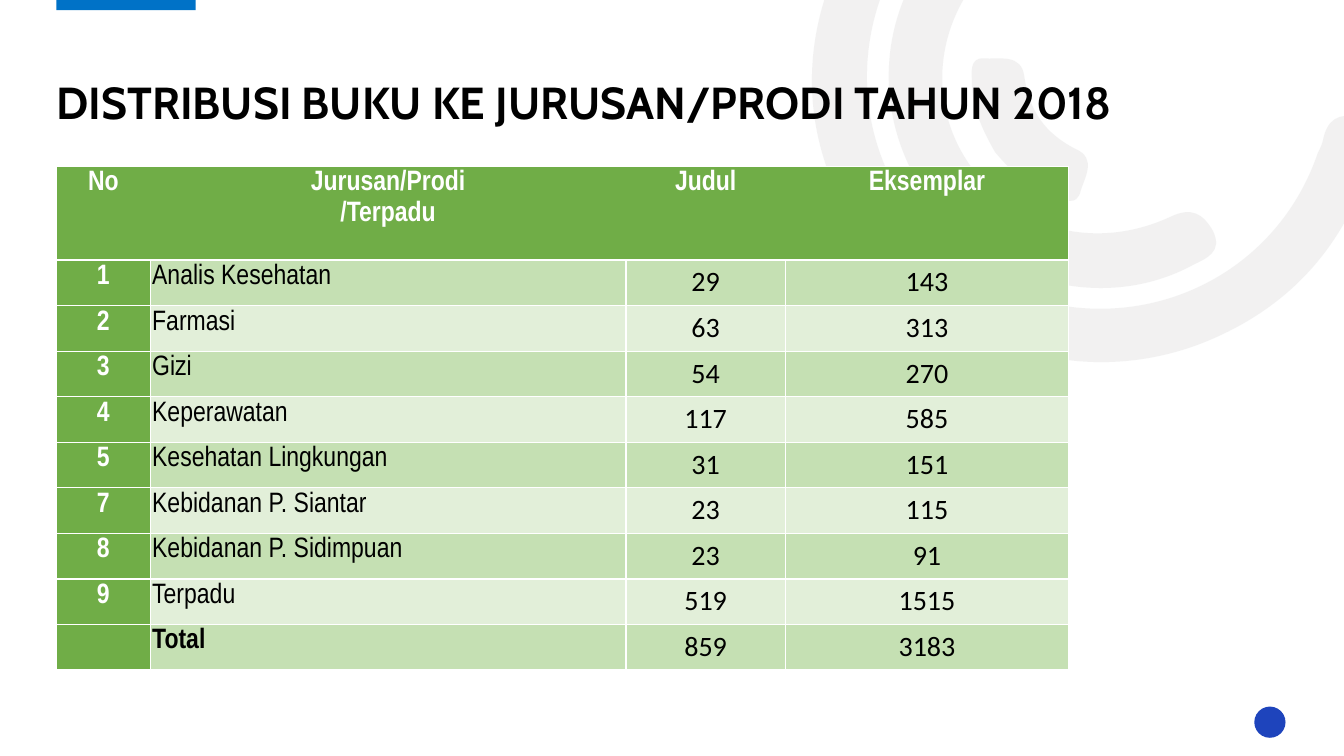
from lxml import etree
from pptx import Presentation
from pptx.dml.color import RGBColor
from pptx.enum.shapes import MSO_SHAPE
from pptx.enum.text import MSO_ANCHOR, PP_ALIGN
from pptx.oxml.ns import qn
from pptx.util import Emu, Pt

RECTANGLE, ELLIPSE = MSO_SHAPE.RECTANGLE, MSO_SHAPE.OVAL
LEFT, CENTER = PP_ALIGN.LEFT, PP_ALIGN.CENTER
TOP, BOTTOM = MSO_ANCHOR.TOP, MSO_ANCHOR.BOTTOM

# Content
TITLE = "DISTRIBUSI BUKU KE JURUSAN/PRODI TAHUN 2018"
HEADER = ("No", "Jurusan/Prodi\n/Terpadu", "Judul", "Eksemplar")
BOOKS = [
    ("1", "Analis Kesehatan", "29", "143"),
    ("2", "Farmasi", "63", "313"),
    ("3", "Gizi", "54", "270"),
    ("4", "Keperawatan", "117", "585"),
    ("5", "Kesehatan Lingkungan", "31", "151"),
    ("7", "Kebidanan P. Siantar", "23", "115"),
    ("8", "Kebidanan P. Sidimpuan", "23", "91"),
    ("9", "Terpadu", "519", "1515"),
    ("", "Total", "859", "3183"),
]

# Background arcs: a start point, then cubic curves of two control points and an end
ARCS = [
    ((851, 229), [
        (799, 149), (787, 50), (838, -50), (890, -152), (976, -203), (1090, -207),
        (1105, -207), (1121, -210), (1131, -195), (1144, -175), (1127, -154), (1098, -154),
        (967, -154), (865, -59), (860, 68), (856, 181), (936, 281), (1046, 302),
        (1160, 324), (1270, 261), (1307, 152), (1309, 148), (1311, 144), (1312, 140),
        (1316, 119), (1327, 111), (1349, 117), (1373, 124), (1367, 141), (1361, 156),
        (1334, 245), (1278, 307), (1191, 341), (1070, 387), (936, 345), (851, 229)]),
    ((922, 199), [
        (862, 115), (869, 7), (940, -68), (951, -79), (962, -95), (980, -78),
        (995, -64), (997, -50), (979, -32), (925, 26), (920, 108), (965, 168),
        (1008, 229), (1088, 249), (1161, 215), (1182, 205), (1193, 212), (1203, 229),
        (1213, 250), (1197, 256), (1183, 263), (1096, 310), (983, 282), (922, 199)]),
    ((987, 151), [
        (975, 130), (964, 107), (964, 82), (964, 73), (961, 57), (976, 58),
        (992, 59), (1013, 53), (1016, 76), (1021, 110), (1036, 132), (1067, 148),
        (1088, 157), (1076, 176), (1072, 189), (1068, 206), (1055, 198), (1045, 194),
        (1021, 187), (1003, 170), (987, 151)]),
]

# Geometry in px, 100 to the inch
PX = 9144
SLIDE_SIZE = (1333, 750)
TITLE_BOX = (56, 27, 1219, 101)
ACCENTS = [(RECTANGLE, (56, -2, 138, 12), "bar"), (ELLIPSE, (1244, 701, 31, 31), "dot")]
TABLE_BOX = (56, 165, 1004, 500)
COLUMN_WIDTHS = (93, 472, 158, 281)
HEADER_HEIGHT = 93
CELL_MARGIN = 2

THEME = {
    "arc": "E7E6E6", "arc_alpha": 53, "bar": "0072C7", "dot": "1E44BC",
    "head": "70AD47", "bands": ("C5E0B3", "E2EFD9"), "white": "FFFFFF", "black": "000000",
    "title_font": "Cabin", "label_font": "Arial Narrow", "number_font": "Calibri",
    "title_size": 32, "cell_size": 20, "border": 1,
}


def emu(*lengths):
    return [Emu(round(length * PX)) for length in lengths]


def apply(target, values):
    for name, value in values.items():
        setattr(target, name, value)


def paint(shape, color):
    shape.shadow.inherit = False
    shape.fill.solid()
    shape.fill.fore_color.rgb = RGBColor.from_string(color)
    shape.line.fill.background()


def write(frame, text, font, size, color, bold, align, spacing):
    for index, line in enumerate(text.split("\n")):
        paragraph = frame.paragraphs[0] if index == 0 else frame.add_paragraph()
        apply(paragraph, {"alignment": align, "line_spacing": spacing})
        run = paragraph.add_run()
        run.text = line
        apply(run.font, {"name": font, "size": Pt(size), "bold": bold})
        run.font.color.rgb = RGBColor.from_string(color)


def add_arc(slide, start, points):
    builder = slide.shapes.build_freeform(*start, scale=PX)
    builder.add_line_segments(points, close=True)
    shape = builder.convert_to_shape()
    paint(shape, THEME["arc"])
    color = shape._element.spPr.find(qn("a:solidFill"))[0]
    etree.SubElement(color, qn("a:alpha"), val=str(THEME["arc_alpha"] * 1000))

    # Turn each three straight segments into one cubic curve
    segments = list(shape._element.iter(qn("a:lnTo")))
    for first in range(0, len(segments), 3):
        curve = etree.Element(qn("a:cubicBezTo"))
        segments[first].addprevious(curve)
        for segment in segments[first:first + 3]:
            curve.append(segment[0])
            segment.getparent().remove(segment)


def set_borders(cell, hidden):
    properties = cell._tc.get_or_add_tcPr()
    for side in "LRTB":
        line = etree.SubElement(properties, qn(f"a:ln{side}"), w=str(Pt(THEME["border"])))
        if side in hidden:
            etree.SubElement(line, qn("a:noFill"))
        else:
            fill = etree.SubElement(line, qn("a:solidFill"))
            etree.SubElement(fill, qn("a:srgbClr"), val=THEME["white"])


def add_book_table(slide):
    rows = [HEADER, *BOOKS]
    last_column = len(HEADER) - 1
    table = slide.shapes.add_table(len(rows), len(HEADER), *emu(*TABLE_BOX)).table
    apply(table, {"first_row": False, "horz_banding": False})
    for column, width in zip(table.columns, emu(*COLUMN_WIDTHS)):
        column.width = width
    body_height = (TABLE_BOX[3] - HEADER_HEIGHT) / len(BOOKS)
    side, = emu(CELL_MARGIN)

    for r, values in enumerate(rows):
        table.rows[r].height = emu(body_height if r else HEADER_HEIGHT)[0]
        for c, text in enumerate(values):
            cell = table.cell(r, c)
            is_head = r == 0 or c == 0
            is_number = r > 0 and c > 1
            # The header has no lines between its columns
            hidden = "" if r else "L" * (c > 0) + "R" * (c < last_column)
            set_borders(cell, hidden)
            cell.fill.solid()
            fill = THEME["head"] if is_head else THEME["bands"][(r - 1) % 2]
            cell.fill.fore_color.rgb = RGBColor.from_string(fill)
            apply(cell, {"margin_left": side, "margin_right": side, "margin_top": 0,
                         "margin_bottom": 0, "vertical_anchor": TOP})
            if text:
                write(cell.text_frame, text,
                      THEME["number_font" if is_number else "label_font"], THEME["cell_size"],
                      THEME["white" if is_head else "black"], is_head or text == "Total",
                      CENTER if is_head or is_number else LEFT, 1.15)


def main():
    presentation = Presentation()
    presentation.slide_width, presentation.slide_height = emu(*SLIDE_SIZE)
    slide = presentation.slides.add_slide(presentation.slide_layouts[6])

    # Background decoration
    for start, points in ARCS:
        add_arc(slide, start, points)
    for kind, box, color in ACCENTS:
        paint(slide.shapes.add_shape(kind, *emu(*box)), THEME[color])

    # Table and title
    add_book_table(slide)
    frame = slide.shapes.add_textbox(*emu(*TITLE_BOX)).text_frame
    apply(frame, {"word_wrap": True, "vertical_anchor": BOTTOM, "margin_left": 0,
                  "margin_right": 0, "margin_top": 0, "margin_bottom": 0})
    write(frame, TITLE, THEME["title_font"], THEME["title_size"], THEME["black"],
          True, LEFT, 0.9)

    presentation.save("out.pptx")


if __name__ == "__main__":
    main()
